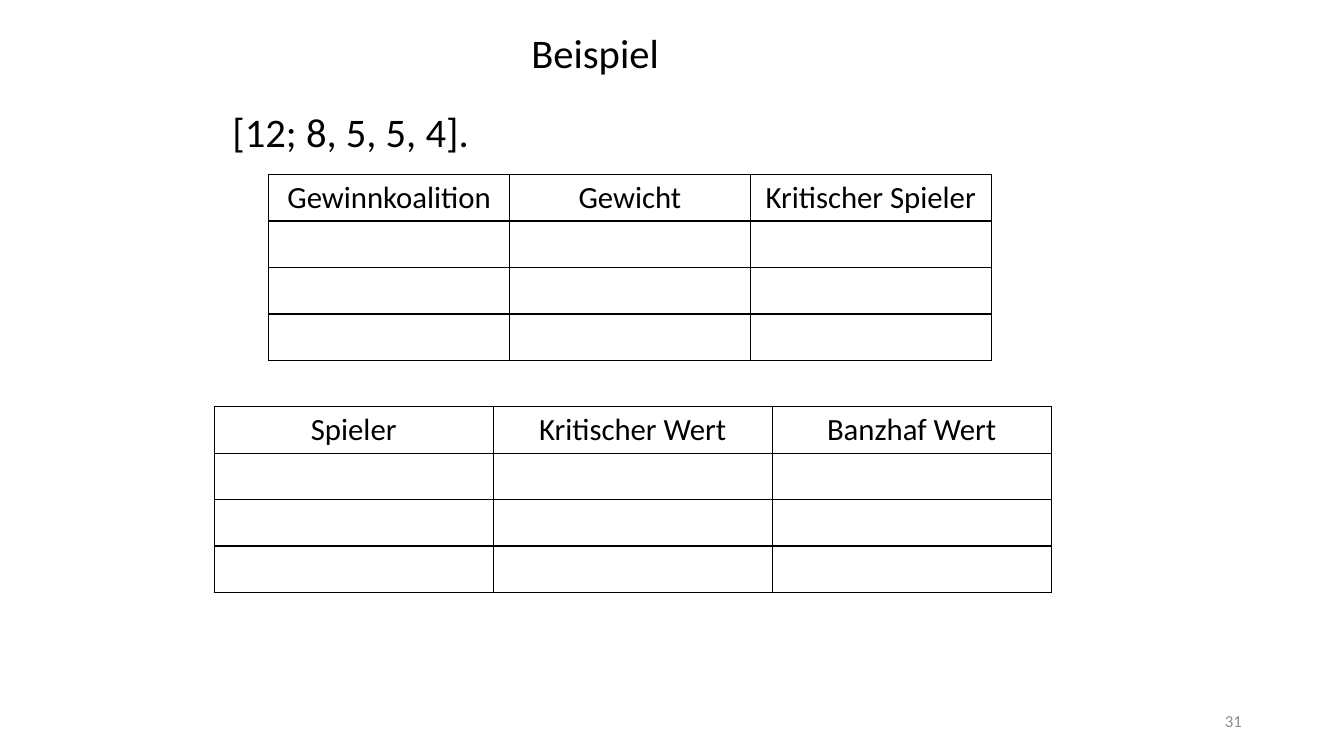
"""Build the slide with the weighted voting example and its two tables."""
from dataclasses import dataclass

from lxml import etree
from pptx import Presentation
from pptx.dml.color import RGBColor
from pptx.enum.text import MSO_ANCHOR, PP_ALIGN
from pptx.oxml.ns import qn
from pptx.util import Cm, Pt

BLACK = RGBColor(0x00, 0x00, 0x00)
GRAY = RGBColor(0x8C, 0x8C, 0x8C)
FONT = "Calibri"
ROW_COUNT = 4
ROW_HEIGHT = 1.17


@dataclass
class Label:
    text: str
    left: float
    top: float
    width: float
    height: float
    size: float
    color: RGBColor = BLACK
    align: PP_ALIGN = PP_ALIGN.LEFT
    anchor: MSO_ANCHOR = MSO_ANCHOR.TOP


@dataclass
class Grid:
    headers: tuple[str, ...]
    left: float
    top: float
    column_width: float


TITLE = Label("Beispiel", 4.45, 0.28, 21.1, 2.06, 29,
              align=PP_ALIGN.CENTER, anchor=MSO_ANCHOR.MIDDLE)
LABELS = (
    Label("31", 23.93, 17.65, 7.62, 1.02, 12, GRAY, PP_ALIGN.RIGHT, MSO_ANCHOR.MIDDLE),
    Label("[12; 8, 5, 5, 4].", 5.61, 2.57, 18.77, 1.8, 29),
)
GRIDS = (
    Grid(("Gewinnkoalition", "Gewicht", "Kritischer Spieler"), 6.77, 4.4, 6.07),
    Grid(("Spieler", "Kritischer Wert", "Banzhaf Wert"), 5.4, 10.25, 7.03),
)


def set_font(p, size: float, color: RGBColor, align: PP_ALIGN) -> None:
    """Format a whole paragraph."""
    p.alignment = align
    p.font.name = FONT
    p.font.size = Pt(size)
    p.font.color.rgb = color


def fill_label(sp, label: Label) -> None:
    """Place a text shape and write its label."""
    sp.left, sp.top = Cm(label.left), Cm(label.top)
    sp.width, sp.height = Cm(label.width), Cm(label.height)
    tf = sp.text_frame
    tf.word_wrap = True
    tf.vertical_anchor = label.anchor
    tf.text = label.text
    set_font(tf.paragraphs[0], label.size, label.color, label.align)


def set_borders(cell) -> None:
    """Draw a thin black line on every side of a cell."""
    tc_pr = cell._tc.get_or_add_tcPr()
    for index, side in enumerate(("a:lnL", "a:lnR", "a:lnT", "a:lnB")):
        line = etree.Element(qn(side), w=str(Pt(1)))
        fill = etree.SubElement(line, qn("a:solidFill"))
        etree.SubElement(fill, qn("a:srgbClr"), val=str(BLACK))
        tc_pr.insert(index, line)


def add_grid(slide, grid: Grid) -> None:
    """Add a table with a header row and empty rows below."""
    columns = len(grid.headers)
    table = slide.shapes.add_table(
        ROW_COUNT, columns, Cm(grid.left), Cm(grid.top),
        Cm(grid.column_width * columns), Cm(ROW_HEIGHT * ROW_COUNT)).table
    table.first_row = False
    table.horz_banding = False
    for column in table.columns:
        column.width = Cm(grid.column_width)
    for row in table.rows:
        row.height = Cm(ROW_HEIGHT)
    for cell in table.iter_cells():
        cell.fill.background()
        cell.margin_left = cell.margin_right = Cm(0.23)
        cell.margin_top = cell.margin_bottom = Cm(0.11)
        set_borders(cell)
    for cell, header in zip(table.rows[0].cells, grid.headers):
        cell.text = header
        set_font(cell.text_frame.paragraphs[0], 22, BLACK, PP_ALIGN.CENTER)


def main() -> None:
    """Create and save the presentation."""
    prs = Presentation()
    prs.slide_width, prs.slide_height = Cm(33.87), Cm(19.05)
    slide = prs.slides.add_slide(prs.slide_layouts[5])
    fill_label(slide.shapes.title, TITLE)
    for label in LABELS:
        fill_label(slide.shapes.add_textbox(0, 0, 0, 0), label)
    for grid in GRIDS:
        add_grid(slide, grid)
    prs.save("out.pptx")


if __name__ == "__main__":
    main()
